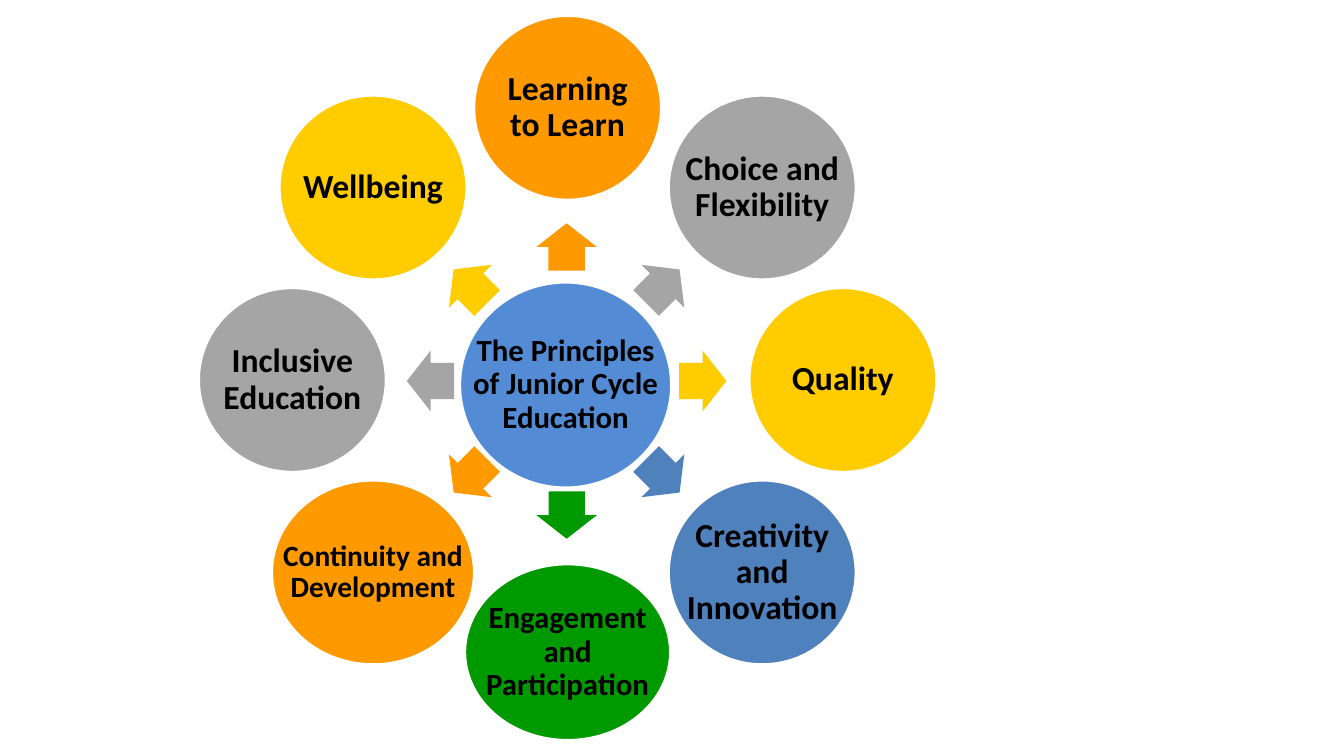
from math import cos, radians, sin, sqrt

from pptx import Presentation
from pptx.dml.color import RGBColor
from pptx.enum.shapes import MSO_SHAPE
from pptx.enum.text import MSO_ANCHOR, PP_ALIGN
from pptx.util import Inches, Pt

ORANGE, GREY, YELLOW = "FF9900", "A5A5A5", "FFCC00"
BLUE, GREEN, HUB_BLUE = "4F81BD", "009900", "538CD5"
CIRCLE_WIDTH, CIRCLE_HEIGHT = 1.86, 1.83
ARROW_LENGTH, ARROW_WIDTH = 0.47, 0.6

# Clockwise from the top: text, fill, size, side margin, width, height
PRINCIPLES = [
    ("Learning to Learn", ORANGE, 24, 0.27, CIRCLE_WIDTH, CIRCLE_HEIGHT),
    ("Choice and Flexibility", GREY, 24, 0, CIRCLE_WIDTH, CIRCLE_HEIGHT),
    ("Quality", YELLOW, 24, 0.27, CIRCLE_WIDTH, CIRCLE_HEIGHT),
    ("Creativity and Innovation", BLUE, 24, 0, CIRCLE_WIDTH, CIRCLE_HEIGHT),
    ("Engagement and Participation", GREEN, 22, 0, 2.04, 1.75),
    ("Continuity and Development", ORANGE, 21, 0.1, 2.01, CIRCLE_HEIGHT),
    ("Inclusive Education", GREY, 24, 0, CIRCLE_WIDTH, CIRCLE_HEIGHT),
    ("Wellbeing", YELLOW, 24, 0, CIRCLE_WIDTH, CIRCLE_HEIGHT),
]


def color(value):
    return RGBColor.from_string(value)


def ring_point(center, radius_x, radius_y, angle):
    turn = radians(angle)
    return center[0] + radius_x * cos(turn), center[1] + radius_y * sin(turn)


def add_centered_shape(page, kind, center, width, height, fill):
    shape = page.shapes.add_shape(
        kind, Inches(center[0] - width / 2), Inches(center[1] - height / 2),
        Inches(width), Inches(height))
    shape.shadow.inherit = False
    shape.fill.solid()
    shape.fill.fore_color.rgb = color(fill)
    return shape


def add_circle(page, center, text, fill, size, margin, width, height):
    """Add a labelled oval whose margin is measured from its outer box."""
    circle = add_centered_shape(page, MSO_SHAPE.OVAL, center, width, height, fill)
    circle.line.color.rgb = color("FFFFFF")
    circle.line.width = Pt(2)
    frame = circle.text_frame
    frame.word_wrap = True
    frame.vertical_anchor = MSO_ANCHOR.MIDDLE
    # An oval insets its text to the inscribed rectangle; widen it again
    oval_inset = width * (1 - sqrt(0.5)) / 2
    frame.margin_left = frame.margin_right = Inches(margin - oval_inset)
    frame.margin_top = frame.margin_bottom = 0
    para = frame.paragraphs[0]
    para.alignment = PP_ALIGN.CENTER
    para.line_spacing = 0.9
    span = para.add_run()
    span.text = text
    span.font.name = "Calibri"
    span.font.size = Pt(size)
    span.font.bold = True
    span.font.color.rgb = color("000000")


def add_arrow(page, center, angle, fill):
    arrow = add_centered_shape(page, MSO_SHAPE.RIGHT_ARROW, center,
                               ARROW_LENGTH, ARROW_WIDTH, fill)
    arrow.line.fill.background()
    arrow.adjustments[0] = 0.6
    arrow.adjustments[1] = 0.5
    arrow.rotation = angle


def main():
    deck = Presentation()
    deck.slide_width, deck.slide_height = Inches(13.33), Inches(7.5)
    page = deck.slides.add_slide(deck.slide_layouts[6])
    add_circle(page, (5.61, 3.82), "The Principles of Junior Cycle Education",
               HUB_BLUE, 22, 0.1, 2.1, 2.04)
    for index, (text, fill, *layout) in enumerate(PRINCIPLES):
        angle = (270 + index * 360 / len(PRINCIPLES)) % 360
        add_arrow(page, ring_point((5.62, 3.78), 1.35, 1.33, angle), angle, fill)
        add_circle(page, ring_point((5.63, 3.77), 2.73, 2.7, angle),
                   text, fill, *layout)
    deck.save("out.pptx")


if __name__ == "__main__":
    main()
